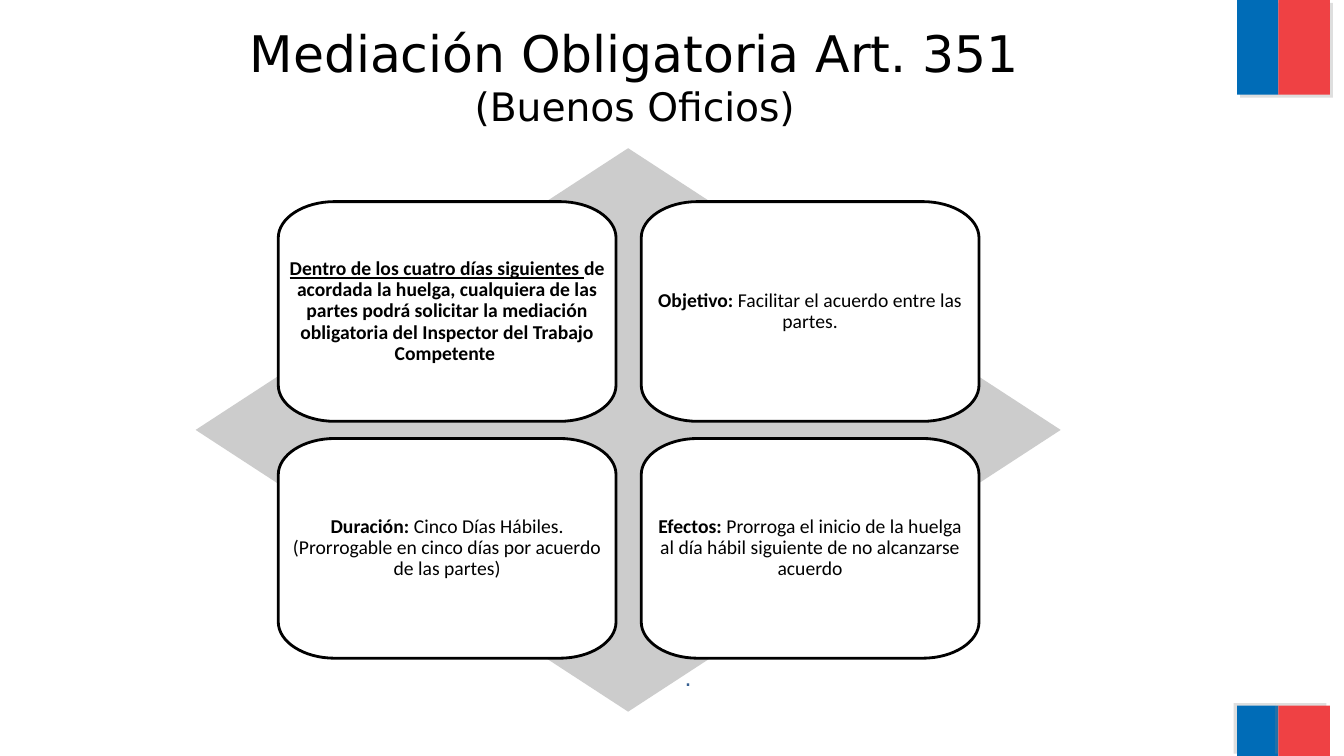
from lxml import etree
from pptx import Presentation
from pptx.dml.color import RGBColor
from pptx.enum.shapes import MSO_SHAPE as SHAPE
from pptx.enum.text import MSO_ANCHOR as ANCHOR, MSO_AUTO_SIZE as FIT, PP_ALIGN as ALIGN
from pptx.oxml import parse_xml
from pptx.oxml.ns import nsdecls, qn
from pptx.util import Inches, Pt

COLORS = {"blue": "006CB7", "red": "EF4144", "shadow": "808080", "diamond": "CCCCCC",
          "white": "FFFFFF", "black": "000000", "dot": "376092"}

# Text of the four cards, row by row: (lead, rest)
CARDS = [
    ("Dentro de los cuatro días siguientes ",
     "de acordada la huelga, cualquiera de las partes podrá solicitar la mediación "
     "obligatoria del Inspector del Trabajo Competente "),
    ("Objetivo: ", "Facilitar el acuerdo entre las partes."),
    ("Duración: ",
     "Cinco Días Hábiles. (Prorrogable en cinco días por acuerdo de las partes)"),
    ("Efectos: ",
     "Prorroga el inicio de la huelga al día hábil siguiente de no alcanzarse acuerdo"),
]
CARD_W, CARD_H = 3.35, 2.18
RADIUS_X, RADIUS_Y = 0.56, 0.36
CURVE = 0.55  # share of the way from an arc's end to its corner


def rgb(name):
    return RGBColor.from_string(COLORS[name])


def add_run(p, text, size, font, color="black", bold=False, underline=False):
    r = p.add_run()
    r.text = text
    r.font.size, r.font.name = Pt(size), font
    r.font.bold, r.font.underline = bold, underline
    r.font.color.rgb = rgb(color)


def paint(sp, fill, line=None):
    sp.shadow.inherit = False
    sp.fill.solid()
    sp.fill.fore_color.rgb = rgb(fill)
    if line:
        sp.line.color.rgb = rgb(line)
        sp.line.width = Pt(2)
    else:
        sp.line.fill.background()


def add_preset(s, kind, x, y, w, h, fill):
    sp = s.shapes.add_shape(kind, Inches(x), Inches(y), Inches(w), Inches(h))
    paint(sp, fill)
    return sp


def add_band(s, x, y, w, h, fill, angle):
    """Colour band with a soft offset shadow."""
    sp = add_preset(s, SHAPE.RECTANGLE, x, y, w, h, fill)
    effects = sp._element.spPr.find(qn("a:effectLst"))
    effects.append(parse_xml(
        f'<a:outerShdw {nsdecls("a")} blurRad="0" dist="{Pt(3)}" dir="{angle * 60000}" '
        f'rotWithShape="0"><a:srgbClr val="{COLORS["shadow"]}">'
        '<a:alpha val="25000"/></a:srgbClr></a:outerShdw>'))


def add_title(s):
    title = s.shapes.title
    title.left, title.top = Inches(1.83), Inches(0.17)
    title.width, title.height = Inches(8.93), Inches(0.83)
    tf = title.text_frame
    tf.auto_size, tf.vertical_anchor = FIT.NONE, ANCHOR.TOP
    p = tf.paragraphs[0]
    p.alignment = ALIGN.CENTER
    add_run(p, "Mediación Obligatoria Art. 351", 36, "DejaVu Sans")
    p.add_line_break()
    etree.SubElement(p._p.find(qn("a:br")), qn("a:rPr"), sz="3600")
    add_run(p, "(Buenos Oficios)", 28, "DejaVu Sans")


def round_corners(sp):
    """Turn every second segment of the outline into a quarter ellipse."""
    steps = list(sp._element.iter(qn("a:moveTo"), qn("a:lnTo")))
    ends = [(int(pt.get("x")), int(pt.get("y"))) for step in steps for pt in step]
    for i in range(1, len(steps), 2):
        a, b = ends[i - 1], ends[i]
        corner = (a[0], b[1]) if i % 4 == 1 else (b[0], a[1])
        curve = steps[i]
        curve.tag = qn("a:cubicBezTo")
        for n, end in enumerate((a, b)):
            x, y = (round(e + CURVE * (c - e)) for e, c in zip(end, corner))
            curve.insert(n, etree.Element(qn("a:pt"), x=str(x), y=str(y)))


def add_card_outline(s, x, y):
    """Card with elliptical corners, clockwise from the upper left side."""
    xs = [Inches(v) for v in (x, x + RADIUS_X, x + CARD_W - RADIUS_X, x + CARD_W)]
    ys = [Inches(v) for v in (y, y + RADIUS_Y, y + CARD_H - RADIUS_Y, y + CARD_H)]
    order = [(0, 1), (1, 0), (2, 0), (3, 1), (3, 2), (2, 3), (1, 3), (0, 2)]
    points = [(xs[i], ys[j]) for i, j in order]
    builder = s.shapes.build_freeform(*points[0])
    builder.add_line_segments(points[1:], close=True)
    sp = builder.convert_to_shape()
    round_corners(sp)
    paint(sp, "white", "black")
    return sp


def add_card(s, x, y, lead, rest, is_rule):
    tf = add_card_outline(s, x, y).text_frame
    tf.word_wrap, tf.vertical_anchor = True, ANCHOR.MIDDLE
    tf.margin_left = tf.margin_right = tf.margin_top = tf.margin_bottom = Inches(0.09)
    p = tf.paragraphs[0]
    p.alignment, p.line_spacing = ALIGN.CENTER, 0.9
    add_run(p, lead, 14, "Calibri", bold=True, underline=is_rule)
    add_run(p, rest, 14, "Calibri", bold=is_rule)


def add_dot(s):
    tf = s.shapes.add_textbox(Inches(4.15), Inches(6.51), Inches(5.35), Inches(0.4)).text_frame
    tf.word_wrap, tf.auto_size = True, FIT.SHAPE_TO_FIT_TEXT
    tf.paragraphs[0].alignment = ALIGN.CENTER
    add_run(tf.paragraphs[0], ".", 18, "Arial", "dot")


def main():
    prs = Presentation()
    prs.slide_width, prs.slide_height = Inches(13.33), Inches(7.5)
    s = prs.slides.add_slide(prs.slide_layouts[5])

    # Colour bands at the top and bottom right
    for y, h, angle in [(0, 0.94, 45), (7, 0.5, 215)]:
        add_band(s, 12.27, y, 0.41, h, "blue", angle)
        add_band(s, 12.68, y, 0.51, h, "red", angle)

    add_title(s)

    # Diamond with a two by two grid of cards
    add_preset(s, SHAPE.DIAMOND, 1.94, 1.47, 8.58, 5.59, "diamond")
    for i, (lead, rest) in enumerate(CARDS):
        row, col = divmod(i, 2)
        add_card(s, 2.76 + 3.6 * col, 2 + 2.35 * row, lead, rest, is_rule=i == 0)

    add_dot(s)
    prs.save("out.pptx")


if __name__ == "__main__":
    main()
